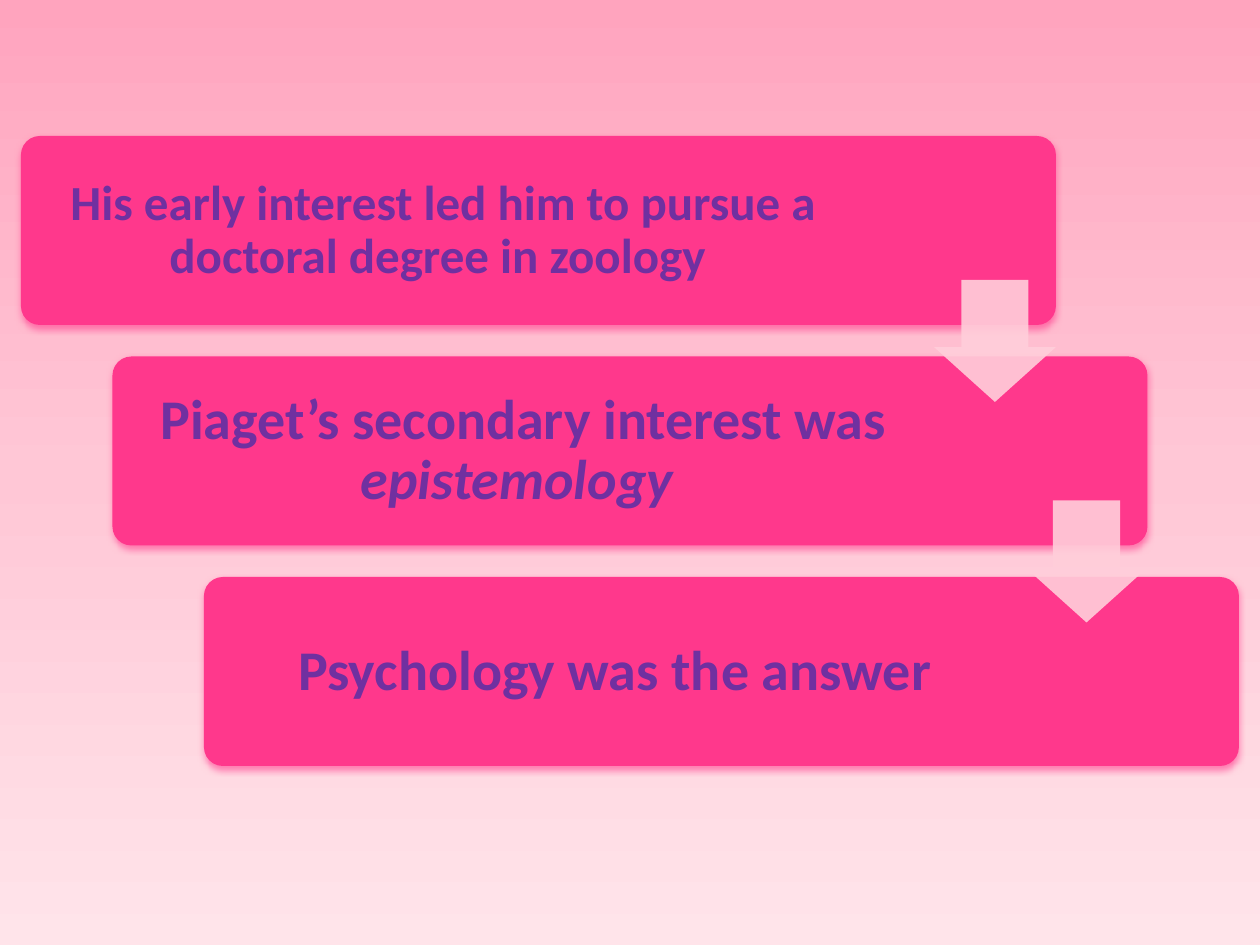
"""Build a slide with three stepped cards joined by down arrows."""
import copy
import dataclasses

import lxml.etree
import pptx
import pptx.dml.color
import pptx.enum.shapes
import pptx.enum.text
import pptx.oxml.ns
import pptx.util

EMU_PER_PX = 914400 / 126
STEP_X, STEP_Y = 91.5, 220.5
CARD_LEFT, CARD_TOP, CARD_WIDTH, CARD_HEIGHT = 21, 136, 1035, 189
LABEL_INSET, LABEL_HEIGHT = 6, 178
ARROW_LEFT, ARROW_TOP, ARROW_SIZE = 934, 280, 122
CARD_COLOR, LABEL_COLOR, ARROW_COLOR = "FF388C", "7030A0", "FFCEDA"
BACKGROUND = [(0, "FFA4BE"), (0.5, "FFC7D6"), (1, "FFE4EA")]


@dataclasses.dataclass
class Step:
    """One card with its wording and the size of its label."""

    text: str
    emphasis: str
    size: int
    label_width: int
    margin: int


STEPS = [
    Step("His early interest led him to pursue a doctoral degree in zoology ", "", 28, 832, 15),
    Step("Piaget’s secondary interest was ", "epistemology ", 32, 810, 16),
    Step("Psychology was the answer", "", 32, 810, 16),
]


def px(length: float) -> pptx.util.Emu:
    """Turn pixels into EMU."""
    return pptx.util.Emu(round(length * EMU_PER_PX))


def rgb(color: str) -> pptx.dml.color.RGBColor:
    """Turn a hex string into a colour."""
    return pptx.dml.color.RGBColor.from_string(color)


def child(parent, tag: str, **attributes: str):
    """Add a drawing element to a parent."""
    return lxml.etree.SubElement(parent, pptx.oxml.ns.qn(tag), attributes)


def set_all(target, values: dict) -> None:
    """Set attributes from a dict of format values."""
    for name, value in values.items():
        setattr(target, name, value)


def paint_background(slide) -> None:
    """Fill the background with a vertical three-stop gradient."""
    fill = slide.background.fill
    fill.gradient()
    fill.gradient_angle = 270
    first = fill.gradient_stops[0]
    set_all(first.color, {"rgb": rgb(BACKGROUND[0][1])})
    stop_list = fill._fill._gradFill.gsLst
    stop_list.insert(1, copy.deepcopy(stop_list[0]))
    for stop, (position, color) in zip(fill.gradient_stops, BACKGROUND):
        stop.position = position
        stop.color.rgb = rgb(color)


def add_block(slide, kind, box: tuple, color: str, adjustments: list[float]):
    """Draw a plain filled preset shape."""
    block = slide.shapes.add_shape(kind, *map(px, box))
    block.shadow.inherit = False
    block.fill.solid()
    block.fill.fore_color.rgb = rgb(color)
    block.line.fill.background()
    for index, value in enumerate(adjustments):
        block.adjustments[index] = value
    return block


def add_card(slide, left: float, top: float) -> None:
    """Draw a rounded card with a soft shadow in its own colour."""
    card = add_block(slide, pptx.enum.shapes.MSO_SHAPE.ROUNDED_RECTANGLE,
                     (left, top, CARD_WIDTH, CARD_HEIGHT), CARD_COLOR, [0.1])
    effects = card._element.spPr.find(pptx.oxml.ns.qn("a:effectLst"))
    shadow = child(effects, "a:outerShdw", blurRad="50800", dist="25400",
                   dir="5400000", rotWithShape="0")
    child(child(shadow, "a:srgbClr", val=CARD_COLOR), "a:alpha", val="60000")


def add_label(slide, step: Step, left: float, top: float) -> None:
    """Write the wording of a step over its card."""
    label = slide.shapes.add_textbox(px(left), px(top), px(step.label_width), px(LABEL_HEIGHT))
    sides = ("margin_left", "margin_top", "margin_right", "margin_bottom")
    frame = label.text_frame
    set_all(frame, {"word_wrap": True, "vertical_anchor": pptx.enum.text.MSO_ANCHOR.MIDDLE,
                    **dict.fromkeys(sides, px(step.margin))})
    paragraph = frame.paragraphs[0]
    set_all(paragraph, {"alignment": pptx.enum.text.PP_ALIGN.CENTER, "line_spacing": 0.9})
    for wording, italic in ((step.text, None), (step.emphasis, True)):
        if wording:
            run = paragraph.add_run()
            run.text = wording
            set_all(run.font, {"name": "Calibri", "size": pptx.util.Pt(step.size),
                               "bold": True, "italic": italic})
            run.font.color.rgb = rgb(LABEL_COLOR)


def add_arrow(slide, left: float, top: float) -> None:
    """Draw a slightly transparent down arrow."""
    arrow = add_block(slide, pptx.enum.shapes.MSO_SHAPE.DOWN_ARROW,
                      (left, top, ARROW_SIZE, ARROW_SIZE), ARROW_COLOR, [0.55, 0.45])
    fill_color = arrow._element.spPr.find(".//" + pptx.oxml.ns.qn("a:srgbClr"))
    child(fill_color, "a:alpha", val="90000")


def main() -> None:
    """Build and save the slide."""
    deck = pptx.Presentation()
    set_all(deck, {"slide_width": px(1260), "slide_height": px(945)})
    slide = deck.slides.add_slide(deck.slide_layouts[6])
    paint_background(slide)
    for index, step in enumerate(STEPS):
        left, top = CARD_LEFT + index * STEP_X, CARD_TOP + index * STEP_Y
        add_card(slide, left, top)
        add_label(slide, step, left + LABEL_INSET, top + LABEL_INSET)
    for index in range(len(STEPS) - 1):
        add_arrow(slide, ARROW_LEFT + index * STEP_X, ARROW_TOP + index * STEP_Y)
    deck.save("out.pptx")


if __name__ == "__main__":
    main()
